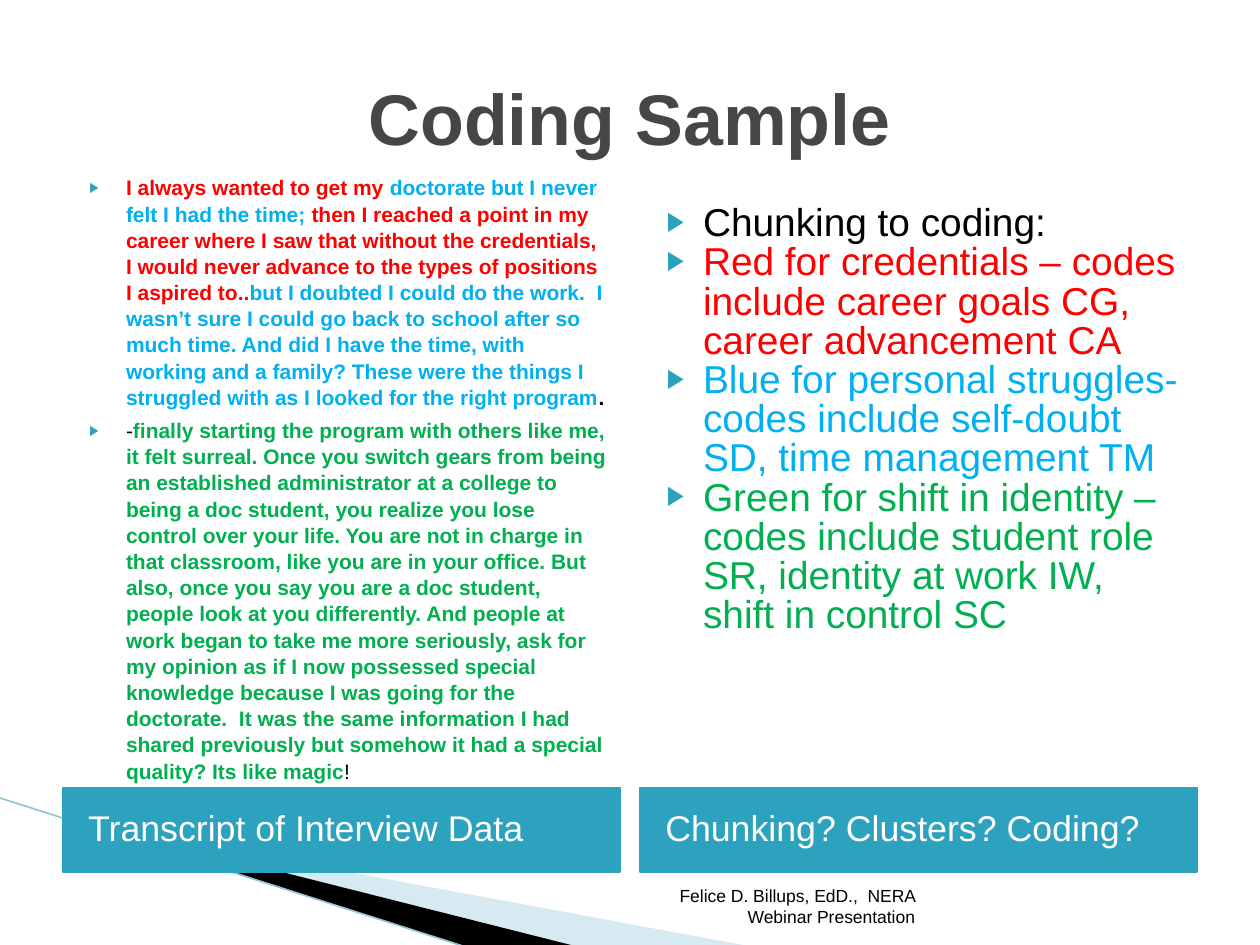
"""Build the Coding Sample slide: a colour-coded transcript beside its codes."""
from lxml.etree import SubElement
from pptx import Presentation
from pptx.dml.color import RGBColor
from pptx.enum.shapes import MSO_CONNECTOR as Connector
from pptx.enum.text import MSO_ANCHOR as Anchor, MSO_AUTO_SIZE as AutoSize, PP_ALIGN as Align
from pptx.oxml.ns import qn
from pptx.util import Inches, Pt

FONT = "Arial"
BLACK = RGBColor(0x00, 0x00, 0x00)
WHITE = RGBColor(0xFF, 0xFF, 0xFF)
GREY = RGBColor(0x46, 0x46, 0x46)
TEAL = RGBColor(0x2D, 0xA2, 0xBF)
PALE = RGBColor(0x9C, 0xCA, 0xDC)
SKY = RGBColor(0x93, 0xC5, 0xD8)
RED = RGBColor(0xFF, 0x00, 0x00)
BLUE = RGBColor(0x00, 0xB0, 0xF0)
GREEN = RGBColor(0x00, 0xB0, 0x50)

TITLE = [[("Coding Sample", GREY, True)]]
HEADINGS = ["Transcript of Interview Data", "Chunking? Clusters? Coding?"]
TRANSCRIPT = [
    [
        ("I always wanted to get my ", RED, True),
        ("doctorate but I never felt I had the time; ", BLUE, True),
        ("then I reached a point in my career where I saw that without the credentials, "
         "I would never advance to the types of positions I aspired to..", RED, True),
        ("but I doubted I could do the work.  I wasn’t sure I could go back to school after "
         "so much time. And did I have the time, with working and a family? These were the "
         "things I struggled with as I looked for the right program", BLUE, True),
        (".", BLACK, True),
    ],
    [
        ("-", BLACK, False),
        ("finally starting the program with others like me, it felt surreal. Once you switch "
         "gears from being an established administrator at a college to being a doc student, "
         "you realize you lose control over your life. You are not in charge in that "
         "classroom, like you are in your office. But also, once you say you are a doc "
         "student, people look at you differently. And people at work began to take me more "
         "seriously, ask for my opinion as if I now possessed special knowledge because I was "
         "going for the doctorate.  It was the same information I had shared previously but "
         "somehow it had a special quality? Its like magic", GREEN, True),
        ("!", BLACK, False),
    ],
]
CODES = [
    [("Chunking to coding:", BLACK, False)],
    [("Red for credentials – codes include career goals CG, career advancement CA", RED, False)],
    [("Blue for personal struggles- codes include self-doubt SD, time management TM",
      BLUE, False)],
    [("Green for shift in identity – codes include student role SR, identity at work IW, "
      "shift in control SC", GREEN, False)],
]
FOOTER = [[("Felice D. Billups, EdD.,  NERA Webinar Presentation", BLACK, False)]]
WEDGES = [
    (PALE, 40, [(0.55, 6.51), (5.95, 7.51), (4.56, 7.51), (0.55, 6.5)]),
    (BLACK, 100, [(0.53, 6.49), (4.57, 7.51), (3.72, 7.52), (0.54, 6.5)]),
]
COLUMN_LEFTS = [0.5, 5.08]
COLUMN_WIDTH = 4.42


def place(box, left, top, width, height):
    box.left, box.top = Inches(left), Inches(top)
    box.width, box.height = Inches(width), Inches(height)
    box.element.getparent().append(box.element)


def add_bullet(para, percent):
    props = para._p.get_or_add_pPr()
    props.set("marL", str(Inches(0.4)))
    props.set("indent", str(Inches(-0.29)))
    colour = SubElement(props, qn("a:buClr"))
    SubElement(colour, qn("a:srgbClr"), val=str(TEAL))
    SubElement(props, qn("a:buSzPct"), val=str(percent * 1000))
    SubElement(props, qn("a:buChar"), char="▶")


def write(box, paragraphs, size, anchor=Anchor.TOP, align=Align.LEFT, spacing=1.0,
          gap=0, bullet=None, inset=0.1):
    frame = box.text_frame
    frame.word_wrap, frame.auto_size = True, AutoSize.NONE
    frame.vertical_anchor = anchor
    frame.margin_left, frame.margin_right = Inches(inset), Inches(0.1)
    frame.margin_top = frame.margin_bottom = Inches(0.05)
    for index, spans in enumerate(paragraphs):
        para = frame.add_paragraph() if index else frame.paragraphs[0]
        if bullet:
            add_bullet(para, bullet)
        para.alignment, para.line_spacing = align, spacing
        para.space_before, para.space_after = Pt(gap if index else 0), Pt(0)
        for text, colour, bold in spans:
            span = para.add_run()
            span.text = text
            span.font.name, span.font.size, span.font.bold = FONT, Pt(size), bold
            span.font.color.rgb = colour


def draw_wedge(page, colour, opacity, points):
    corners = [(Inches(x), Inches(y)) for x, y in points]
    builder = page.shapes.build_freeform(*corners[0], scale=1.0)
    builder.add_line_segments(corners[1:], close=True)
    wedge = builder.convert_to_shape()
    wedge.shadow.inherit = False
    wedge.fill.solid()
    wedge.fill.fore_color.rgb = colour
    wedge.line.fill.background()
    if opacity < 100:
        tint = wedge.element.spPr.find(qn("a:solidFill"))[0]
        SubElement(tint, qn("a:alpha"), val=str(opacity * 1000))


def main():
    deck = Presentation()
    deck.slide_width, deck.slide_height = Inches(10), Inches(7.5)
    page = deck.slides.add_slide(deck.slide_layouts[4])
    title, left_heading, left_body, right_heading, right_body = page.placeholders

    for wedge in WEDGES:
        draw_wedge(page, *wedge)
    line = page.shapes.add_connector(
        Connector.STRAIGHT, Inches(-0.01), Inches(6.33), Inches(3.71), Inches(7.52))
    line.line.color.rgb, line.line.width = SKY, Pt(0.95)
    SubElement(line.element.spPr, qn("a:effectLst"))

    place(title, 0.5, 0.3, 9, 1.25)
    write(title, TITLE, 41, Anchor.MIDDLE, Align.CENTER)

    for box, left, text in zip((left_heading, right_heading), COLUMN_LEFTS, HEADINGS):
        place(box, left, 6.25, COLUMN_WIDTH, 0.67)
        box.fill.solid()
        box.fill.fore_color.rgb = TEAL
        box.line.color.rgb, box.line.width = TEAL, Pt(0.75)
        write(box, [[(text, WHITE, False)]], 20.4, Anchor.MIDDLE, spacing=0.9, inset=0.2)

    place(left_body, COLUMN_LEFTS[0], 1.33, COLUMN_WIDTH, 4.83)
    write(left_body, TRANSCRIPT, 12, spacing=1.04, gap=4, bullet=68)
    place(right_body, COLUMN_LEFTS[1], 1.58, COLUMN_WIDTH, 4.31)
    write(right_body, CODES, 22.2, spacing=0.84, bullet=69)

    footer = page.shapes.add_textbox(Inches(4.79), Inches(7.01), Inches(2.57), Inches(0.4))
    write(footer, FOOTER, 10, Anchor.BOTTOM, Align.RIGHT)
    deck.save("out.pptx")


if __name__ == "__main__":
    main()
